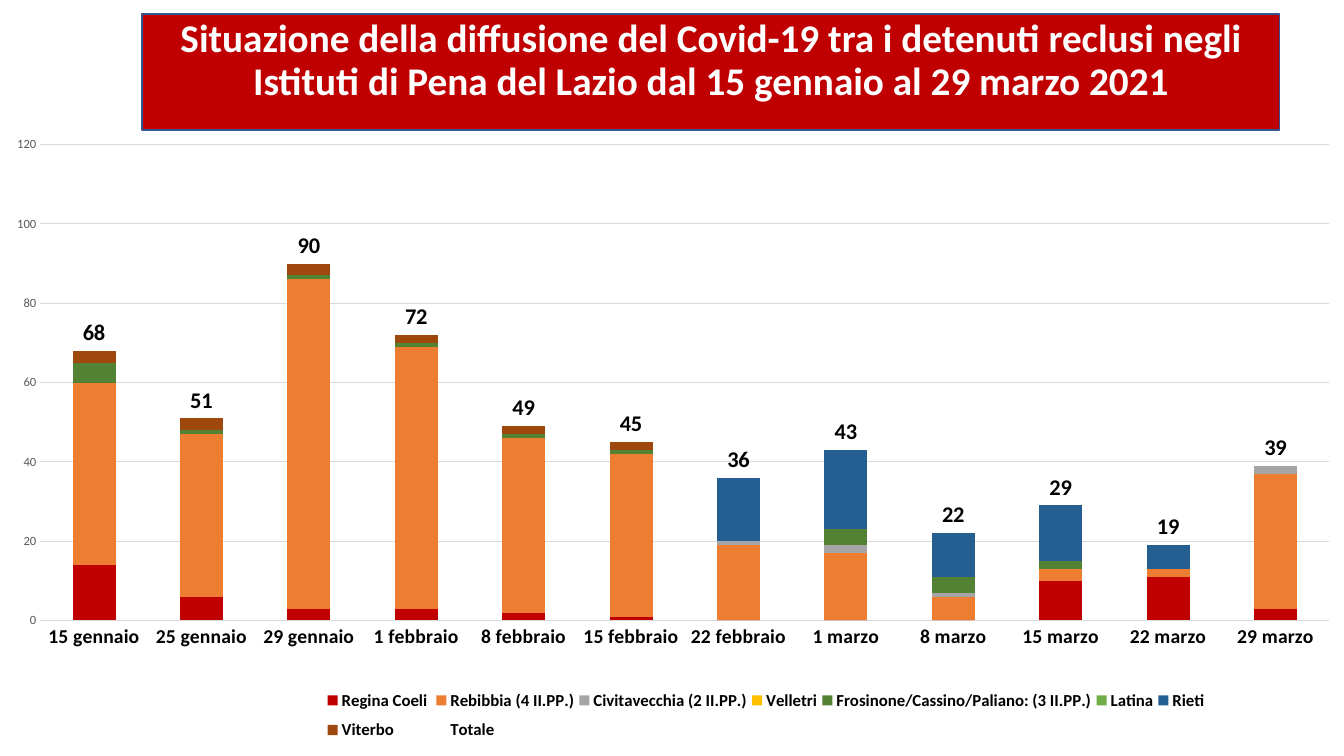
"""Build the slide on Covid-19 among prison inmates in Lazio."""
from dataclasses import dataclass

from lxml import etree
from pptx import Presentation
from pptx.chart.data import CategoryChartData
from pptx.dml.color import RGBColor
from pptx.enum.chart import XL_CHART_TYPE, XL_LABEL_POSITION, XL_LEGEND_POSITION, XL_TICK_MARK
from pptx.enum.shapes import MSO_SHAPE
from pptx.enum.text import MSO_ANCHOR, PP_ALIGN
from pptx.oxml.ns import qn
from pptx.util import Inches, Pt

STACKED = XL_CHART_TYPE.COLUMN_STACKED
INSIDE_BASE = XL_LABEL_POSITION.INSIDE_BASE
BOTTOM = XL_LEGEND_POSITION.BOTTOM
NO_TICK = XL_TICK_MARK.NONE
RECTANGLE = MSO_SHAPE.RECTANGLE
TOP = MSO_ANCHOR.TOP
CENTER = PP_ALIGN.CENTER

TITLE = ("Situazione della diffusione del Covid-19 tra i detenuti reclusi negli "
         "Istituti di Pena del Lazio dal 15 gennaio al 29 marzo 2021")
DATES = ["15 gennaio", "25 gennaio", "29 gennaio", "1 febbraio", "8 febbraio", "15 febbraio",
         "22 febbraio", "1 marzo", "8 marzo", "15 marzo", "22 marzo", "29 marzo"]
PRISONS = [
    ("Regina Coeli ", "C00000", [14, 6, 3, 3, 2, 1, 0, 0, 0, 10, 11, 3]),
    ("Rebibbia (4 II.PP.)", "ED7D31", [46, 41, 83, 66, 44, 41, 19, 17, 6, 3, 2, 34]),
    ("Civitavecchia (2 II.PP.)", "A5A5A5", [0, 0, 0, 0, 0, 0, 1, 2, 1, 0, 0, 2]),
    ("Velletri", "FFC000", [0] * 12),
    ("Frosinone/Cassino/Paliano: (3 II.PP.)", "548235", [5, 1, 1, 1, 1, 1, 0, 4, 4, 2, 0, 0]),
    ("Latina", "70AD47", [0] * 12),
    ("Rieti", "255E91", [0, 0, 0, 0, 0, 0, 16, 20, 11, 14, 6, 0]),
    ("Viterbo", "9E480E", [3, 3, 3, 2, 2, 2, 0, 0, 0, 0, 0, 0]),
]
TOTALS = [sum(day) for day in zip(*(values for _, _, values in PRISONS))]


@dataclass(frozen=True)
class Theme:
    """Colours and type sizes of the slide."""
    font: str = "Calibri"
    banner: str = "C00000"
    border: str = "325491"
    white: str = "FFFFFF"
    text: str = "000000"
    muted: str = "595959"
    grid: str = "D9D9D9"
    title_size: int = 28
    label_size: int = 16
    category_size: int = 14
    legend_size: int = 12
    chart_size: int = 10
    scale_size: int = 9


class SlideBuilder:
    """Draw styled elements on the current slide."""

    def __init__(self, prs, theme):
        """Add a blank slide."""
        self.theme = theme
        self.slide = prs.slides.add_slide(prs.slide_layouts[6])

    def style(self, font, size, color, bold=False):
        """Set a font from the theme."""
        font.name = self.theme.font
        font.size = Pt(size)
        font.bold = bold
        font.color.rgb = RGBColor.from_string(color)

    def line(self, line, color, width):
        """Set the colour and width of a line."""
        line.color.rgb = RGBColor.from_string(color)
        line.width = Pt(width)

    def banner(self, text, left, top, width, height):
        """Draw the title banner."""
        sp = self.slide.shapes.add_shape(
            RECTANGLE, Inches(left), Inches(top), Inches(width), Inches(height))
        sp.shadow.inherit = False
        sp.fill.solid()
        sp.fill.fore_color.rgb = RGBColor.from_string(self.theme.banner)
        self.line(sp.line, self.theme.border, 1)
        tf = sp.text_frame
        tf.word_wrap = True
        tf.vertical_anchor = TOP
        p = tf.paragraphs[0]
        p.text = text
        p.alignment = CENTER
        p.line_spacing = 0.9
        p.space_before = Pt(10)
        self.style(p.font, self.theme.title_size, self.theme.white, True)

    def layout(self, parent, index, x, y, w, h, inner=False):
        """Place a chart part by fractions of the chart area."""
        for old in parent.findall(qn("c:layout")):
            parent.remove(old)
        layout = etree.Element(qn("c:layout"))
        manual = etree.SubElement(layout, qn("c:manualLayout"))
        settings = [("layoutTarget", "inner")] if inner else []
        settings += [("xMode", "edge"), ("yMode", "edge"), ("x", x), ("y", y), ("w", w), ("h", h)]
        for tag, value in settings:
            etree.SubElement(manual, qn(f"c:{tag}")).set("val", str(value))
        parent.insert(index, layout)

    def stacked_chart(self, dates, prisons, totals, left, top, width, height):
        """Draw stacked columns with totals above them."""
        data = CategoryChartData()
        data.categories = dates
        for name, _, values in prisons:
            data.add_series(name, values)
        data.add_series("Totale", totals)
        chart = self.slide.shapes.add_chart(
            STACKED, Inches(left), Inches(top), Inches(width), Inches(height), data).chart
        chart.has_title = False
        self.style(chart.font, self.theme.chart_size, self.theme.text)
        plot = chart.plots[0]
        plot.vary_by_categories = False
        plot.gap_width = 150
        plot.overlap = 100
        *columns, total = plot.series
        for column, (_, color, _) in zip(columns, prisons):
            column.format.fill.solid()
            column.format.fill.fore_color.rgb = RGBColor.from_string(color)
        total.format.fill.background()
        total.format.line.fill.background()
        labels = total.data_labels
        labels.show_value = True
        labels.position = INSIDE_BASE
        self.style(labels.font, self.theme.label_size, self.theme.text, True)
        self.axes(chart)
        self.legend(chart)
        self.layout(chart.plots[0]._element.getparent(), 0, 0.03, 0.025, 0.959, 0.759, True)

    def axes(self, chart):
        """Style both axes and the gridlines."""
        dates, scale = chart.category_axis, chart.value_axis
        for axis in (dates, scale):
            axis.major_tick_mark = axis.minor_tick_mark = NO_TICK
        self.style(dates.tick_labels.font, self.theme.category_size, self.theme.text, True)
        self.line(dates.format.line, self.theme.grid, 0.75)
        self.style(scale.tick_labels.font, self.theme.scale_size, self.theme.muted)
        scale.format.line.fill.background()
        scale.minimum_scale, scale.maximum_scale, scale.major_unit = 0, 120, 20
        scale.has_major_gridlines = True
        self.line(scale.major_gridlines.format.line, self.theme.grid, 0.75)

    def legend(self, chart):
        """Add the legend below the columns."""
        chart.has_legend = True
        legend = chart.legend
        legend.position = BOTTOM
        legend.include_in_layout = False
        self.style(legend.font, self.theme.legend_size, self.theme.text, True)
        self.layout(legend._element, 1, 0.24, 0.88, 0.66, 0.11)


def main():
    """Build and save the presentation."""
    prs = Presentation()
    prs.slide_width, prs.slide_height = Inches(13.33), Inches(7.5)
    s = SlideBuilder(prs, Theme())
    s.banner(TITLE, 1.41, 0.14, 11.28, 1.15)
    s.stacked_chart(DATES, PRISONS, TOTALS, 0, 1.28, 13.33, 6.22)
    prs.save("out.pptx")


if __name__ == "__main__":
    main()
